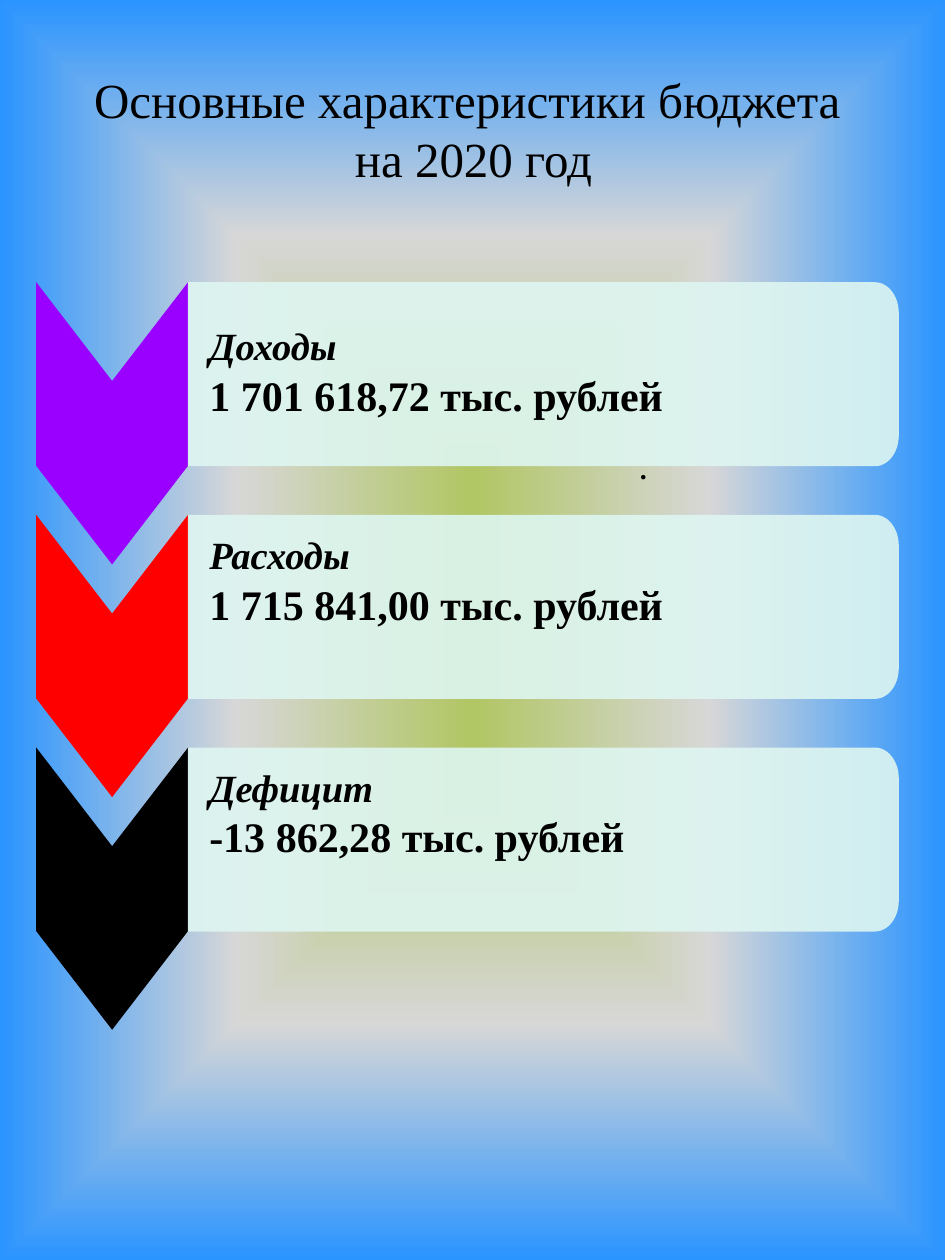
"""Builds a slide with the main figures of the 2020 budget."""
from math import cos, pi, sin

from lxml import etree
from pptx import Presentation
from pptx.dml.color import RGBColor
from pptx.enum.shapes import MSO_SHAPE
from pptx.enum.text import MSO_ANCHOR, PP_ALIGN
from pptx.oxml import parse_xml
from pptx.oxml.ns import nsdecls, qn
from pptx.util import Cm, Pt

CHEVRON = MSO_SHAPE.CHEVRON
MIDDLE, TOP = MSO_ANCHOR.MIDDLE, MSO_ANCHOR.TOP
LEFT, CENTER = PP_ALIGN.LEFT, PP_ALIGN.CENTER

FONT = "Times New Roman"
INK, CARD_COLOR = "000000", "DEF6F1"
BACKGROUND_STOPS = [(0, "B1C664"), (50, "D7D7D7"), (100, "2A94FF")]

FIRST_TOP, PITCH = 5.69, 4.69
CHEVRON_LEFT, CHEVRON_WIDTH, CHEVRON_HEIGHT = 0.73, 3.06, 5.69
CARD_LEFT, CARD_WIDTH, CARD_HEIGHT = 3.79, 14.33, 3.71
CORNER_WIDTH, CORNER_HEIGHT, CORNER_STEPS = 0.48, 0.62, 12

FIGURES = [
    ("Доходы", "1 701 618,72 тыс. рублей", "9900FF", 0.15),
    ("Расходы", "1 715 841,00 тыс. рублей", "FF0000", 1.12),
    ("Дефицит", "-13 862,28 тыс. рублей", "000000", 1.12),
]


def color(value):
    """Return the colour for a hex string."""
    return RGBColor.from_string(value)


def apply(target, values):
    """Set attributes of an object from a dict."""
    for name, value in values.items():
        setattr(target, name, value)


class BudgetSlide:
    """Holds the style and the current slide."""

    def __init__(self, deck):
        self.page = deck.slides.add_slide(deck.slide_layouts[6])
        self.font = {"name": FONT, "bold": False, "italic": False}

    def background(self, stops):
        """Fill the page with a gradient from its centre to its edges."""
        self.page.background.fill.solid()
        properties = self.page.element.find(".//" + qn("p:bgPr"))
        items = "".join(
            f'<a:gs pos="{place * 1000}"><a:srgbClr val="{value}"/></a:gs>'
            for place, value in stops)
        gradient = parse_xml(
            f'<a:gradFill {nsdecls("a")} rotWithShape="1"><a:gsLst>{items}</a:gsLst>'
            '<a:path path="shape"><a:fillToRect l="50000" t="50000" r="50000" b="50000"/>'
            '</a:path></a:gradFill>')
        properties.replace(properties[0], gradient)

    def paint(self, shape, value):
        """Give a shape a plain fill without line or shadow."""
        shape.shadow.inherit = False
        shape.fill.solid()
        shape.fill.fore_color.rgb = color(value)
        shape.line.fill.background()

    def spans(self, para, text, **font):
        """Add text to a paragraph, with a line break at each newline."""
        for index, line in enumerate(text.split("\n")):
            if index:
                para.add_line_break()
            span = para.add_run()
            span.text = line
            apply(span.font, {**self.font, **font})
            span.font.color.rgb = color(INK)

    def text(self, left, top, width, height, text, align, anchor, wrap, **font):
        """Add a text box with one paragraph."""
        box = self.page.shapes.add_textbox(Cm(left), Cm(top), Cm(width), Cm(height))
        apply(box.text_frame, {"word_wrap": wrap, "vertical_anchor": anchor})
        para = box.text_frame.paragraphs[0]
        para.alignment = align
        self.spans(para, text, **font)

    def chevron(self, top, value):
        """Add a chevron that points down."""
        left = CHEVRON_LEFT + (CHEVRON_WIDTH - CHEVRON_HEIGHT) / 2
        turned_top = top + (CHEVRON_HEIGHT - CHEVRON_WIDTH) / 2
        shape = self.page.shapes.add_shape(
            CHEVRON, Cm(left), Cm(turned_top), Cm(CHEVRON_HEIGHT), Cm(CHEVRON_WIDTH))
        shape.rotation = 90
        shape.adjustments[0] = 0.65
        self.paint(shape, value)

    def card(self, top, name, amount, bottom_margin):
        """Add a card with rounded right corners, a name and an amount."""
        right, bottom = CARD_LEFT + CARD_WIDTH, top + CARD_HEIGHT
        centers = [(-pi / 2, top + CORNER_HEIGHT), (0, bottom - CORNER_HEIGHT)]
        points = [
            (Cm(right - CORNER_WIDTH + CORNER_WIDTH * cos(start + turn)),
             Cm(middle + CORNER_HEIGHT * sin(start + turn)))
            for start, middle in centers
            for turn in (pi / 2 * step / CORNER_STEPS for step in range(CORNER_STEPS + 1))]
        outline = self.page.shapes.build_freeform(Cm(CARD_LEFT), Cm(top))
        outline.add_line_segments(points + [(Cm(CARD_LEFT), Cm(bottom))], close=True)
        shape = outline.convert_to_shape()
        self.paint(shape, CARD_COLOR)
        fill_color = shape.element.find(".//" + qn("a:srgbClr"))
        etree.SubElement(fill_color, qn("a:alpha"), val="90000")

        frame = shape.text_frame
        apply(frame, {
            "word_wrap": True, "vertical_anchor": MIDDLE, "margin_left": Cm(0.43),
            "margin_top": Cm(0.15), "margin_right": Cm(0.15),
            "margin_bottom": Cm(bottom_margin)})
        lines = [(frame.paragraphs[0], name, 22, True),
                 (frame.add_paragraph(), amount, 24, False)]
        for para, text, size, italic in lines:
            apply(para, {"alignment": LEFT, "line_spacing": 0.9, "space_after": Pt(3.5)})
            self.spans(para, text, size=Pt(size), bold=True, italic=italic)


def main():
    """Build and save the deck."""
    deck = Presentation()
    apply(deck, {"slide_width": Cm(19.05), "slide_height": Cm(25.4)})
    slide = BudgetSlide(deck)
    slide.background(BACKGROUND_STOPS)
    slide.text(0.97, 1.02, 17.15, 3.15, "Основные характеристики бюджета \nна 2020 год",
               CENTER, MIDDLE, True, size=Pt(28))
    slide.text(12.65, 8.97, 0.66, 0.94, ".", LEFT, TOP, False, size=Pt(16), bold=True)
    for index, (name, amount, value, bottom_margin) in enumerate(FIGURES):
        top = FIRST_TOP + index * PITCH
        slide.chevron(top, value)
        slide.card(top, name, amount, bottom_margin)
    deck.save("out.pptx")


if __name__ == "__main__":
    main()
